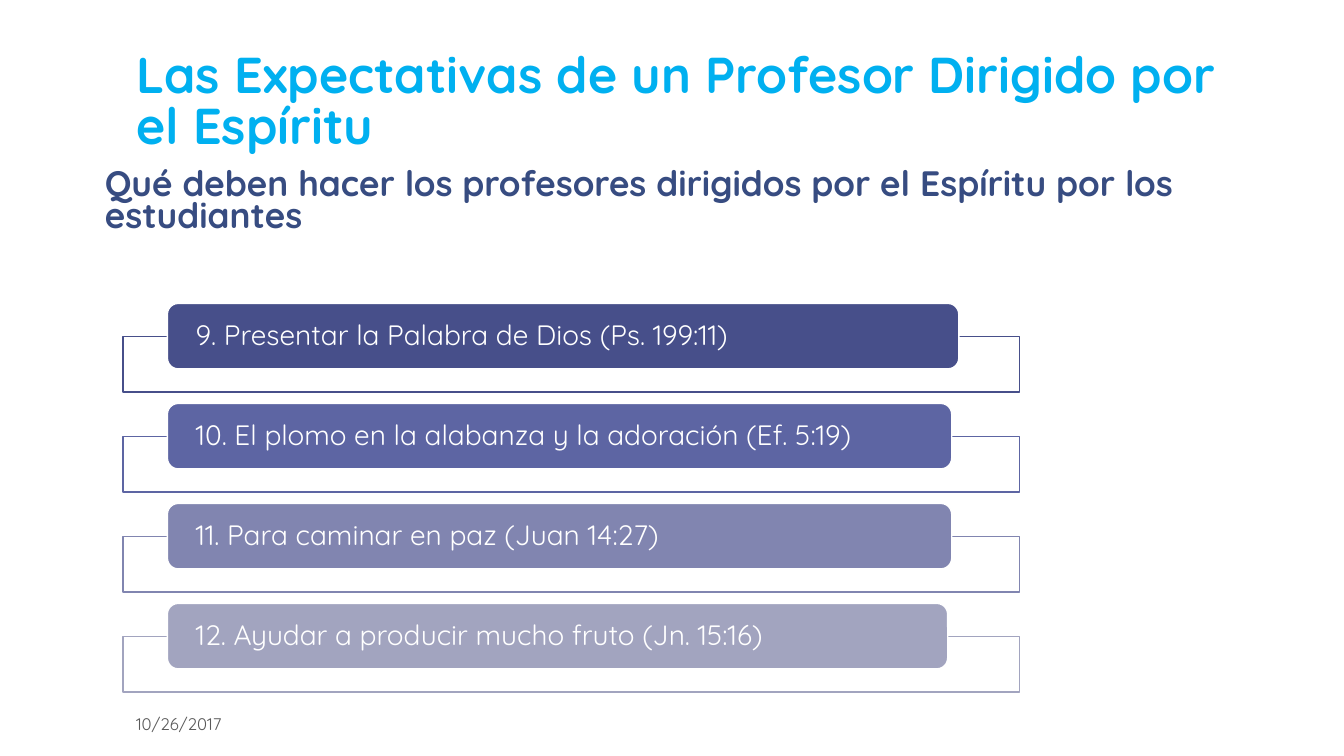
from pptx import Presentation
from pptx.dml.color import RGBColor
from pptx.enum.shapes import MSO_SHAPE
from pptx.enum.text import MSO_ANCHOR, PP_ALIGN
from pptx.util import Inches, Pt

COLORS = {
    "title": "00B0F0",
    "lead": "374C81",
    "date": "595959",
    "white": "FFFFFF",
    "bar1": "474F8A",
    "bar2": "5D65A3",
    "bar3": "8185B0",
    "bar4": "A2A4BF",
}


def put_text(shape, text, size, color, bold=False, line=1.0,
             anchor=MSO_ANCHOR.TOP, side=0.13, edge=0.07):
    frame = shape.text_frame
    frame.word_wrap = True
    frame.vertical_anchor = anchor
    frame.margin_left = frame.margin_right = Inches(side)
    frame.margin_top = frame.margin_bottom = Inches(edge)
    par = frame.paragraphs[0]
    par.alignment = PP_ALIGN.LEFT
    par.line_spacing = line
    run = par.add_run()
    run.text = text
    run.font.name = "Quicksand"
    run.font.size = Pt(size)
    run.font.bold = bold
    run.font.color.rgb = RGBColor.from_string(COLORS[color])


def add_box(kind, left, top, width, height, fill, line):
    box = slide.shapes.add_shape(
        kind, Inches(left), Inches(top), Inches(width), Inches(height))
    box.shadow.inherit = False
    box.fill.solid()
    box.fill.fore_color.rgb = RGBColor.from_string(COLORS[fill])
    box.line.color.rgb = RGBColor.from_string(COLORS[line])
    box.line.width = Pt(1)
    return box


prs = Presentation()
prs.slide_width = Inches(13.33)
prs.slide_height = Inches(7.5)
slide = prs.slides.add_slide(prs.slide_layouts[6])

title = slide.shapes.add_textbox(
    Inches(1.22), Inches(0.08), Inches(11.11), Inches(1.53))
put_text(title, "Las Expectativas de un Profesor Dirigido por el Espíritu",
         36, "title", bold=True, line=0.85, anchor=MSO_ANCHOR.BOTTOM)

lead = slide.shapes.add_textbox(
    Inches(0.91), Inches(1.63), Inches(11.92), Inches(0.78))
put_text(lead, "Qué deben hacer los profesores dirigidos por el Espíritu "
         "por los estudiantes", 25.2, "lead", bold=True, line=0.75)

duties = [
    ("9. Presentar la Palabra de Dios (Ps. 199:11)", 7.85, "bar1"),
    ("10. El plomo en la alabanza y la adoración (Ef. 5:19)", 7.78, "bar2"),
    ("11. Para caminar en paz (Juan 14:27)", 7.78, "bar3"),
    ("12. Ayudar a producir mucho fruto (Jn. 15:16)", 7.74, "bar4"),
]
for row, (text, width, color) in enumerate(duties):
    top = 3.01 + row * 0.992
    add_box(MSO_SHAPE.RECTANGLE, 1.22, top + 0.33, 8.89, 0.55, "white", color)
    bar = add_box(MSO_SHAPE.ROUNDED_RECTANGLE, 1.66, top, width, 0.65,
                  color, "white")
    put_text(bar, text, 20, "white", line=0.9, anchor=MSO_ANCHOR.MIDDLE,
             side=0.25, edge=0)

date = slide.shapes.add_textbox(
    Inches(1.22), Inches(7), Inches(3), Inches(0.35))
put_text(date, "10/26/2017", 12, "date", anchor=MSO_ANCHOR.BOTTOM)

prs.save("out.pptx")
